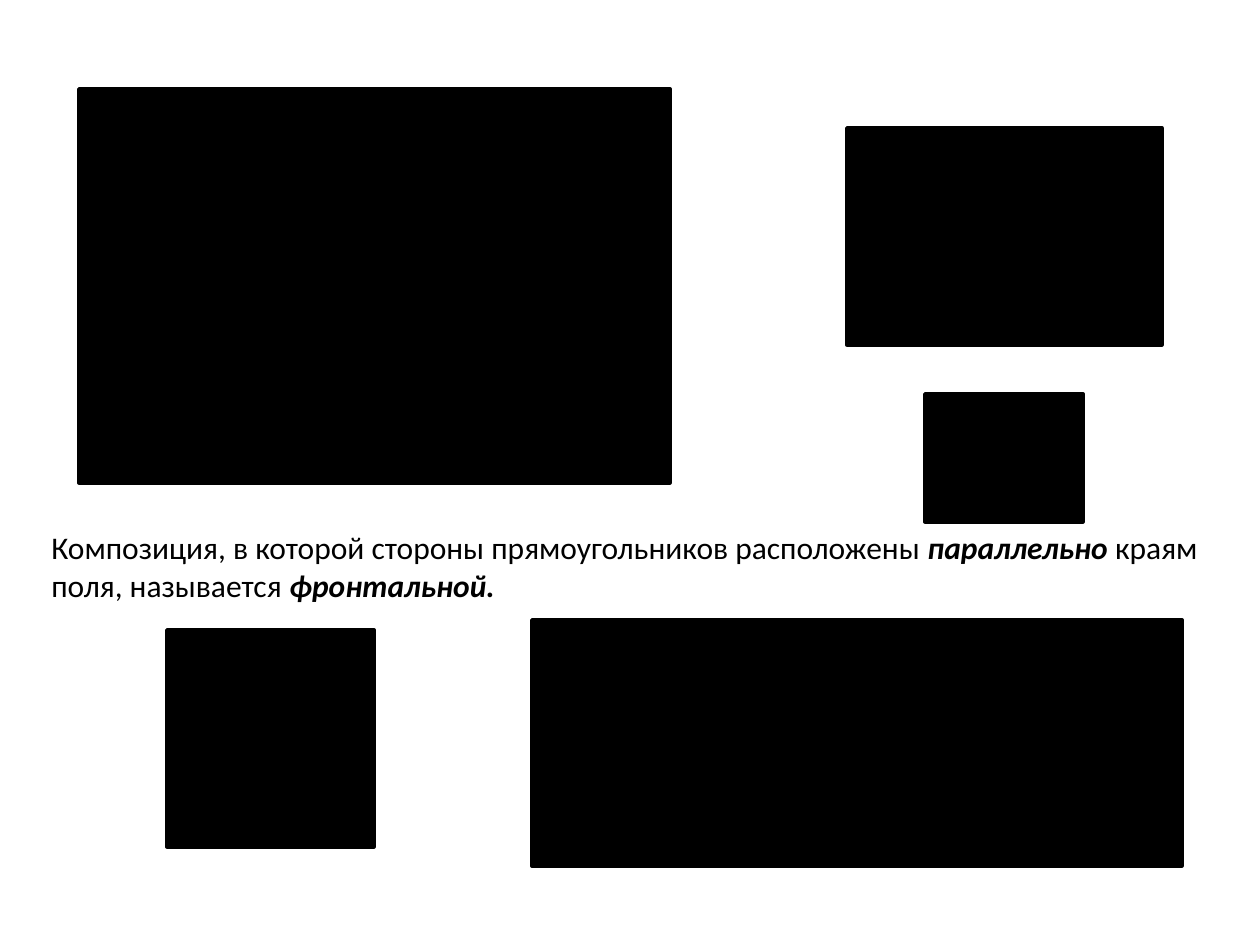
from dataclasses import dataclass

import pptx
import pptx.dml.color
import pptx.enum.shapes
import pptx.enum.text
import pptx.util

PX = 914400 // 126  # EMU per px
BLACK = "000000"


@dataclass
class Box:
    x: int
    y: int
    w: int
    h: int

    def emu(self) -> list[int]:
        return [v * PX for v in (self.x, self.y, self.w, self.h)]


@dataclass
class Phrase:
    text: str
    strong: bool = False


RECTANGLES = [
    Box(79, 89, 591, 394),
    Box(847, 128, 315, 217),
    Box(925, 394, 158, 128),
    Box(532, 620, 650, 246),
    Box(167, 630, 207, 217),
]

CAPTION_BOX = Box(39, 522, 1172, 89)
CAPTION = [
    Phrase("Композиция, в которой стороны прямоугольников расположены "),
    Phrase("параллельно", strong=True),
    Phrase(" краям поля, называется "),
    Phrase("фронтальной.", strong=True),
]


def color(value: str) -> pptx.dml.color.RGBColor:
    return pptx.dml.color.RGBColor.from_string(value)


def add_rectangle(s, box: Box) -> None:
    sp = s.shapes.add_shape(pptx.enum.shapes.MSO_SHAPE.RECTANGLE, *box.emu())
    sp.shadow.inherit = False
    sp.fill.solid()
    sp.fill.fore_color.rgb = color(BLACK)
    sp.line.color.rgb = color(BLACK)
    sp.line.width = pptx.util.Pt(2)


def add_caption(s, box: Box, phrases: list[Phrase]) -> None:
    tf = s.shapes.add_textbox(*box.emu()).text_frame
    tf.word_wrap = True
    tf.auto_size = pptx.enum.text.MSO_AUTO_SIZE.SHAPE_TO_FIT_TEXT
    p = tf.paragraphs[0]
    for phrase in phrases:
        r = p.add_run()
        r.text = phrase.text
        r.font.name = "Calibri"
        r.font.size = pptx.util.Pt(18)
        r.font.bold = r.font.italic = phrase.strong
        r.font.color.rgb = color(BLACK)


def main() -> None:
    prs = pptx.Presentation()
    prs.slide_width = pptx.util.Inches(10)
    prs.slide_height = pptx.util.Inches(7.5)
    s = prs.slides.add_slide(prs.slide_layouts[6])

    # Frontal composition of rectangles
    for box in RECTANGLES:
        add_rectangle(s, box)

    # Definition
    add_caption(s, CAPTION_BOX, CAPTION)

    prs.save("out.pptx")


if __name__ == "__main__":
    main()
